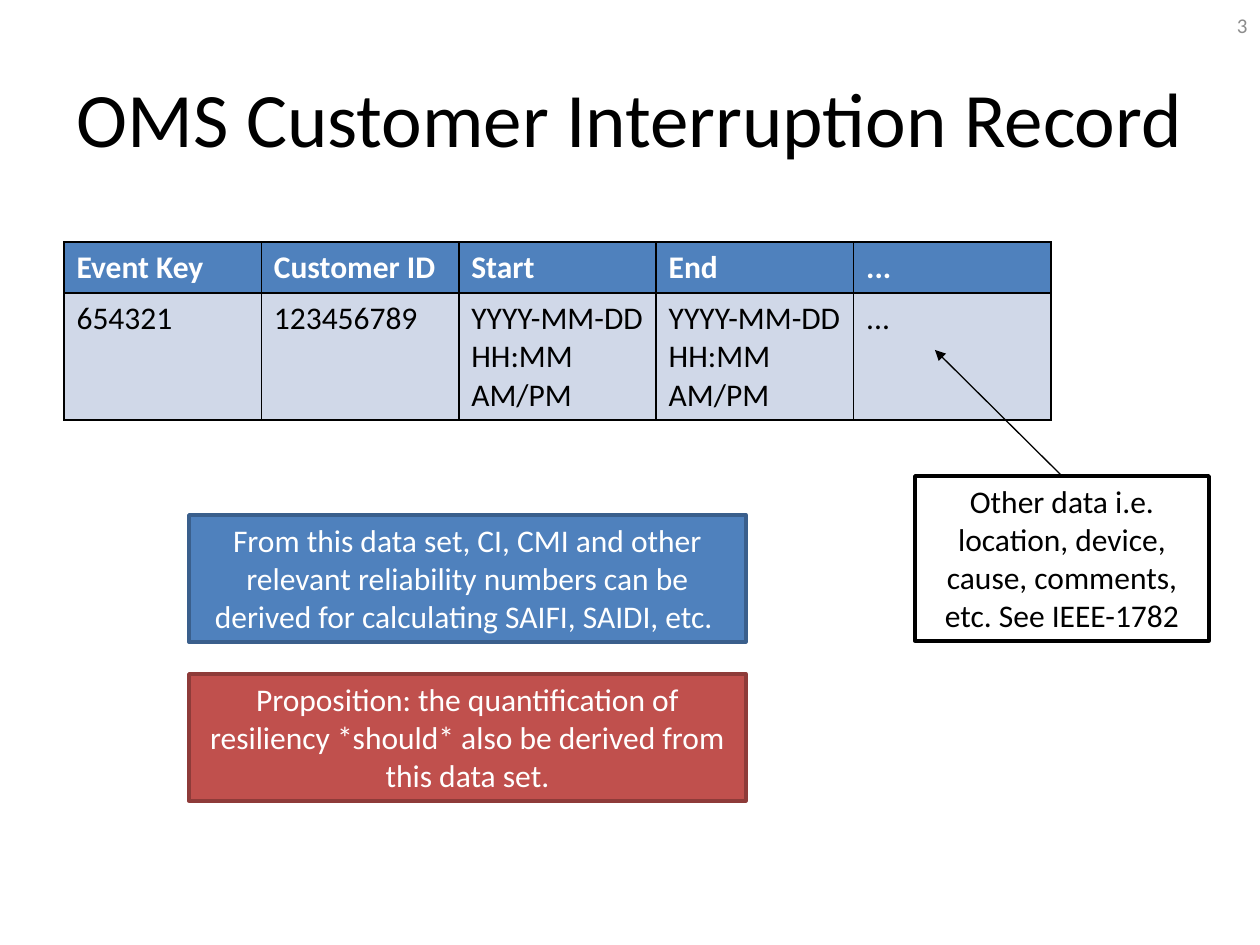
from dataclasses import dataclass

from lxml.etree import SubElement
from pptx import Presentation
from pptx.dml.color import RGBColor
from pptx.enum.shapes import MSO_CONNECTOR as Connector, MSO_SHAPE as Shape
from pptx.enum.text import MSO_ANCHOR as Anchor, PP_ALIGN as Align
from pptx.oxml.ns import qn
from pptx.util import Emu, Pt

EMU_PER_PX = 914400 / 126


def px(length):
    return Emu(round(length * EMU_PER_PX))


def rgb(code):
    return RGBColor.from_string(code)


@dataclass(frozen=True)
class Theme:
    font: str = "Calibri"
    title_size: int = 44
    body_size: int = 18
    number_size: int = 12
    ink: str = "000000"
    paper: str = "FFFFFF"
    muted: str = "8C8C8C"
    blue: str = "4F81BD"
    blue_edge: str = "3A5F8C"
    red: str = "C0504D"
    red_edge: str = "8E3B39"
    pale: str = "D0D8E8"


def write(frame, text, *, font, size, color, align=Align.LEFT, bold=False):
    frame.word_wrap = True
    paragraph = frame.paragraphs[0]
    paragraph.alignment = align
    run = paragraph.add_run()
    run.text = text
    run.font.name = font
    run.font.size = Pt(size)
    run.font.bold = bold
    run.font.color.rgb = rgb(color)


def border_cell(cell, color, width):
    properties = cell._tc.get_or_add_tcPr()
    for index, side in enumerate(("lnL", "lnR", "lnT", "lnB")):
        edge = properties.makeelement(qn(f"a:{side}"), {"w": str(Pt(width))})
        fill = SubElement(edge, qn("a:solidFill"))
        SubElement(fill, qn("a:srgbClr"), val=color)
        properties.insert(index, edge)


class SlideBuilder:
    def __init__(self, slide, theme):
        self.slide = slide
        self.theme = theme

    def label(self, text, box, *, size, color, align):
        area = self.slide.shapes.add_textbox(*map(px, box))
        area.text_frame.vertical_anchor = Anchor.MIDDLE
        write(area.text_frame, text, font=self.theme.font, size=size,
              color=color, align=align)

    def table(self, rows, left, top, width, heights):
        """Add a table of equal columns, with the first row as header."""
        theme = self.theme
        columns = len(rows[0])
        grid = self.slide.shapes.add_table(
            len(rows), columns, px(left), px(top), px(width), px(sum(heights))
        ).table
        for column in grid.columns:
            column.width = px(width / columns)
        for r, (values, height) in enumerate(zip(rows, heights)):
            header = r == 0
            grid.rows[r].height = px(height)
            for c, value in enumerate(values):
                cell = grid.cell(r, c)
                cell.fill.solid()
                cell.fill.fore_color.rgb = rgb(theme.blue if header else theme.pale)
                write(cell.text_frame, value, font=theme.font,
                      size=theme.body_size, bold=header,
                      color=theme.paper if header else theme.ink)
                border_cell(cell, theme.ink, 1)

    def note(self, text, box, *, fill, edge, color):
        panel = self.slide.shapes.add_shape(Shape.RECTANGLE, *map(px, box))
        panel.shadow.inherit = False
        panel.fill.solid()
        panel.fill.fore_color.rgb = rgb(fill)
        panel.line.color.rgb = rgb(edge)
        panel.line.width = Pt(2)
        panel.text_frame.vertical_anchor = Anchor.TOP
        write(panel.text_frame, text, font=self.theme.font,
              size=self.theme.body_size, color=color, align=Align.CENTER)
        return panel

    def arrow_from_top(self, panel, x, y):
        """Point from the top middle of a panel to (x, y)."""
        arrow = self.slide.shapes.add_connector(
            Connector.STRAIGHT, panel.left + panel.width // 2, panel.top, px(x), px(y))
        arrow.begin_connect(panel, 0)
        arrow.line.color.rgb = rgb(self.theme.ink)
        arrow.line.width = Pt(0.75)
        SubElement(arrow.line._get_or_add_ln(), qn("a:tailEnd"), type="triangle")
        SubElement(arrow._element.spPr, qn("a:effectLst"))


def main():
    deck = Presentation()
    deck.slide_width, deck.slide_height = px(1260), px(945)
    theme = Theme()
    page = SlideBuilder(deck.slides.add_slide(deck.slide_layouts[6]), theme)

    page.label("OMS Customer Interruption Record", (63, 38, 1134, 157),
               size=theme.title_size, color=theme.ink, align=Align.CENTER)
    timestamp = "YYYY-MM-DD HH:MM AM/PM"
    page.table(
        [
            ["Event Key", "Customer ID", "Start", "End", "..."],
            ["654321", "123456789", timestamp, timestamp, "..."],
        ],
        left=64, top=242, width=987, heights=(51, 127))
    page.label("3", (966, 0, 294, 51), size=theme.number_size,
               color=theme.muted, align=Align.RIGHT)

    other_data = page.note(
        "Other data i.e. location, device, cause, comments, etc. See IEEE-1782",
        (915, 476, 294, 165),
        fill=theme.paper, edge=theme.ink, color=theme.ink)
    page.arrow_from_top(other_data, 935, 350)

    findings = [
        ("From this data set, CI, CMI and other relevant reliability numbers "
         "can be derived for calculating SAIFI, SAIDI, etc. ",
         theme.blue, theme.blue_edge),
        ("Proposition: the quantification of resiliency *should* also be "
         "derived from this data set.",
         theme.red, theme.red_edge),
    ]
    for index, (text, fill, edge) in enumerate(findings):
        page.note(text, (189, 515 + 159 * index, 557, 127),
                  fill=fill, edge=edge, color=theme.paper)

    deck.save("out.pptx")


if __name__ == "__main__":
    main()
